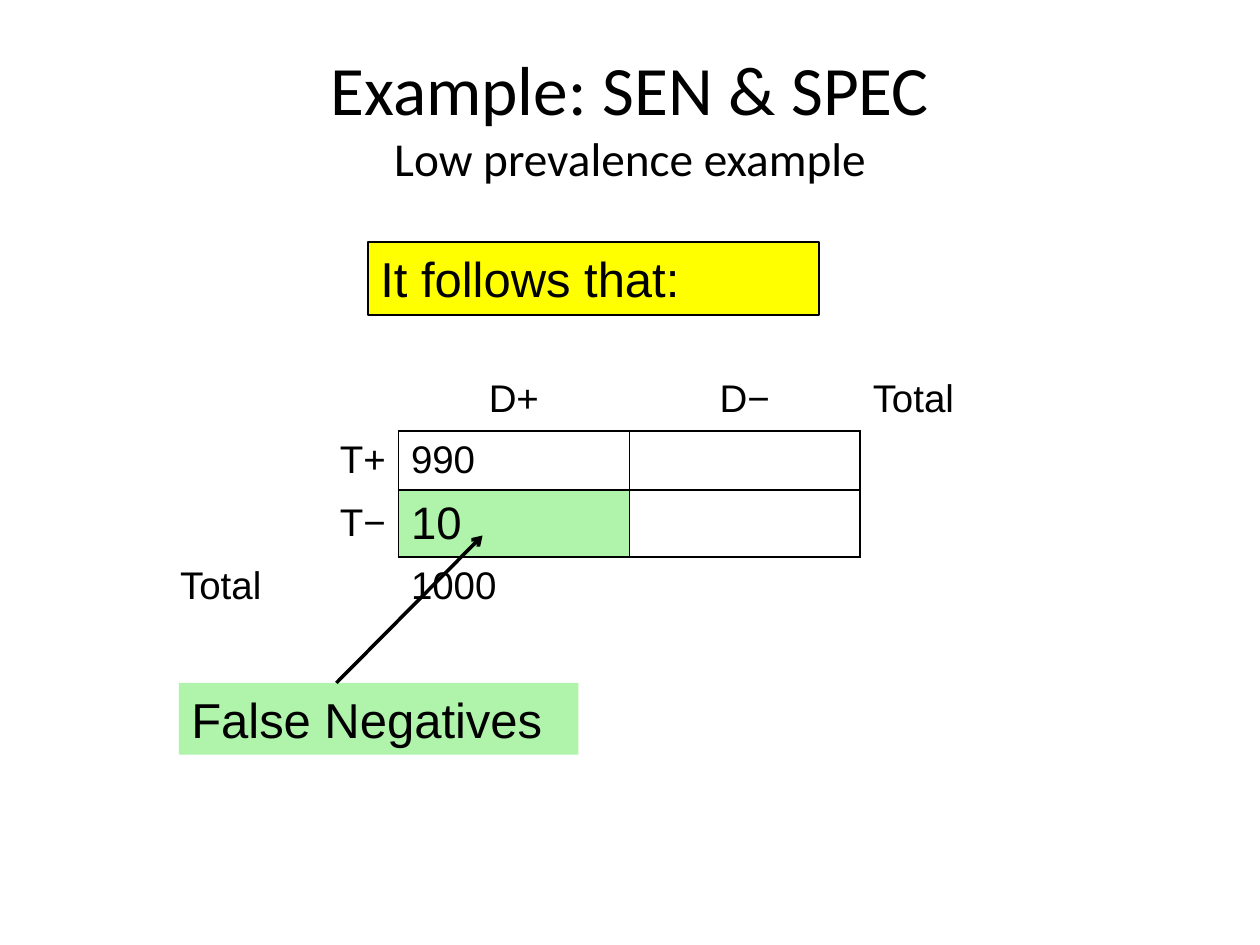
from lxml.etree import SubElement
from pptx import Presentation
from pptx.dml.color import RGBColor
from pptx.enum.shapes import MSO_CONNECTOR, MSO_SHAPE
from pptx.enum.text import MSO_ANCHOR, MSO_AUTO_SIZE, PP_ALIGN
from pptx.oxml.ns import qn
from pptx.util import Inches, Pt

BLACK, GREEN, YELLOW = "000000", "AFF4AA", "FFFF00"
LEFT, CENTER, RIGHT = PP_ALIGN.LEFT, PP_ALIGN.CENTER, PP_ALIGN.RIGHT
ROWS = [
    ["", "D+", "D−", "Total"],
    ["T+", "990", "", ""],
    ["T−", "10", "", ""],
    ["Total", "1000", "", ""],
]
ROW_HEIGHTS = [0.5, 0.47, 0.53, 0.47]
ALIGN = {"D+": CENTER, "D−": CENTER, "T+": RIGHT, "T−": RIGHT}
INNER = (1, 2)  # rows and columns of the framed cells


def color(hex_text):
    return RGBColor.from_string(hex_text)


def style(p, size, font="Arial", align=LEFT):
    p.alignment = align
    for r in p.runs:
        r.font.size, r.font.name, r.font.bold = Pt(size), font, False
        r.font.color.rgb = color(BLACK)


def add_title(s, box):
    sp = s.shapes.title
    sp.left, sp.top, sp.width, sp.height = map(Inches, box)
    tf = sp.text_frame
    tf.text = "Example: SEN & SPEC\vLow prevalence example"
    tf.auto_size, tf.vertical_anchor = MSO_AUTO_SIZE.NONE, MSO_ANCHOR.MIDDLE
    p = tf.paragraphs[0]
    style(p, 39.6, "Calibri", CENTER)
    p.runs[1].font.size = Pt(27)
    # The line break takes the size of the first line
    SubElement(p._p.find(qn("a:br")), qn("a:rPr"), sz="3960")


def add_borders(cell, row, col):
    """Draw every edge that belongs to a framed cell, from both sides."""
    def framed(r, c):
        return r in INNER and c in INNER

    neighbours = {"a:lnL": (row, col - 1), "a:lnR": (row, col + 1),
                  "a:lnT": (row - 1, col), "a:lnB": (row + 1, col)}
    tcPr = cell._tc.get_or_add_tcPr()
    for tag, other in neighbours.items():
        shown = framed(row, col) or framed(*other)
        ln = SubElement(tcPr, qn(tag), w=str(Pt(1) if shown else 0))
        if shown:
            fill = SubElement(ln, qn("a:solidFill"))
            SubElement(fill, qn("a:srgbClr"), val=BLACK)
        else:
            SubElement(ln, qn("a:noFill"))


def add_counts_table(s, box):
    table = s.shapes.add_table(len(ROWS), len(ROWS[0]), *map(Inches, box)).table
    table.first_row = table.horz_banding = False
    for column in table.columns:
        column.width = Inches(box[2] / len(ROWS[0]))
    for i, (texts, height) in enumerate(zip(ROWS, ROW_HEIGHTS)):
        table.rows[i].height = Inches(height)
        for j, text in enumerate(texts):
            cell = table.cell(i, j)
            add_borders(cell, i, j)
            cell.fill.background()
            cell.vertical_anchor = MSO_ANCHOR.MIDDLE
            cell.text = text
            p = cell.text_frame.paragraphs[0]
            style(p, 22, align=ALIGN.get(text, LEFT))
            p.space_before = Pt(4.4)
    # False negatives stand out
    cell = table.cell(2, 1)
    cell.fill.solid()
    cell.fill.fore_color.rgb = color(GREEN)
    style(cell.text_frame.paragraphs[0], 26)


def add_label(s, box, text, fill, outlined=False):
    sp = s.shapes.add_shape(MSO_SHAPE.RECTANGLE, *map(Inches, box))
    sp.shadow.inherit = False
    sp.fill.solid()
    sp.fill.fore_color.rgb = color(fill)
    if outlined:
        sp.line.color.rgb, sp.line.width = color(BLACK), Pt(0.75)
    else:
        sp.line.fill.background()
    tf = sp.text_frame
    tf.text, tf.word_wrap = text, True
    tf.vertical_anchor, tf.auto_size = MSO_ANCHOR.TOP, MSO_AUTO_SIZE.SHAPE_TO_FIT_TEXT
    style(tf.paragraphs[0], 28)
    return tf.paragraphs[0]


def add_arrow(s, start, end):
    line = s.shapes.add_connector(MSO_CONNECTOR.STRAIGHT, *map(Inches, start + end))
    line.line.color.rgb, line.line.width = color(BLACK), Pt(2)
    SubElement(line.line._get_or_add_ln(), qn("a:tailEnd"), type="arrow")
    SubElement(line._element.spPr, qn("a:effectLst"))


def main():
    prs = Presentation()
    prs.slide_width, prs.slide_height = Inches(10), Inches(7.5)
    s = prs.slides.add_slide(prs.slide_layouts[5])
    add_title(s, (0.5, 0.3, 9, 1.25))
    add_counts_table(s, (1.33, 2.92, 7.33, sum(ROW_HEIGHTS)))
    # Callouts and pointer
    add_label(s, (1.42, 5.42, 3.17, 0.57), "False Negatives", GREEN)
    p = add_label(s, (2.92, 1.92, 3.58, 0.58), "It follows that:", YELLOW, True)
    p.space_before = Pt(4.2)
    add_arrow(s, (2.67, 5.42), (3.83, 4.25))
    prs.save("out.pptx")


if __name__ == "__main__":
    main()
